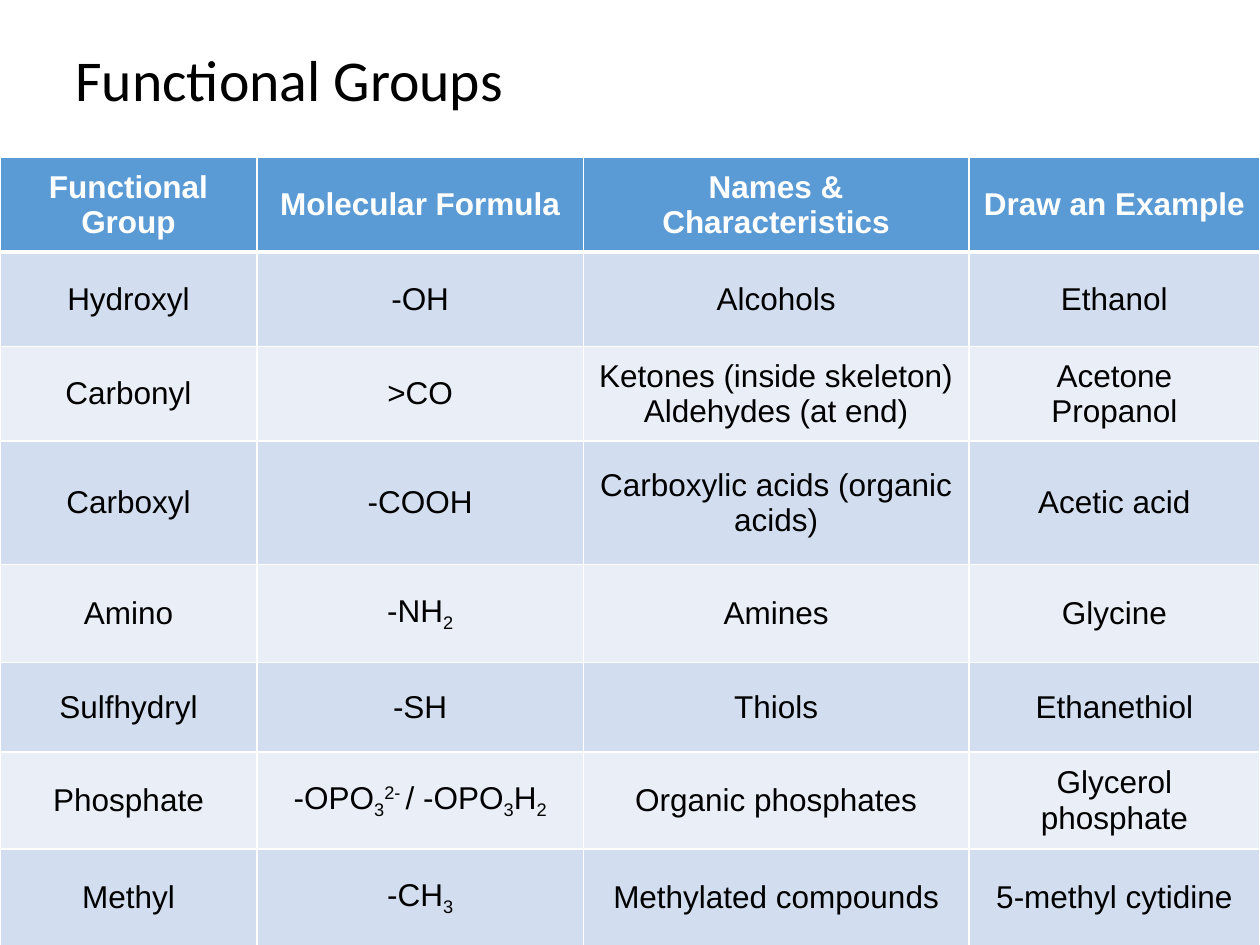
import pptx
import pptx.dml.color
import pptx.enum.text
import pptx.oxml
import pptx.oxml.ns
import pptx.util
from pptx.util import Inches

BLACK = pptx.dml.color.RGBColor(0x00, 0x00, 0x00)
WHITE = pptx.dml.color.RGBColor(0xFF, 0xFF, 0xFF)
HEADER_BLUE = pptx.dml.color.RGBColor(0x5B, 0x9B, 0xD5)
BAND_COLORS = [
    pptx.dml.color.RGBColor(0xD2, 0xDE, 0xEF),
    pptx.dml.color.RGBColor(0xEA, 0xEF, 0xF7),
]

TITLE_FONT = {"name": "Calibri", "size": pptx.util.Pt(33)}
HEADER_FONT = {"name": "Arial", "size": pptx.util.Pt(18), "bold": True}
BODY_FONT = {"name": "Arial", "size": pptx.util.Pt(18), "bold": False}

SUB, SUPER = -25000, 30000
COLUMN_WIDTHS = [2.04, 2.59, 3.06, 2.31]
ROW_HEIGHTS = [0.75, 0.75, 0.75, 0.98, 0.78, 0.71, 0.77, 0.77]

PHOSPHATE_FORMULA = [
    ("-OPO", 0), ("3", SUB), ("2- ", SUPER), ("/ -OPO", 0),
    ("3", SUB), ("H", 0), ("2", SUB),
]
HEADINGS = [
    "Functional Group", "Molecular Formula", "Names & Characteristics", "Draw an Example",
]
GROUPS = [
    ["Hydroxyl", "-OH", "Alcohols", "Ethanol"],
    ["Carbonyl", ">CO", "Ketones (inside skeleton)\nAldehydes (at end)", "Acetone\nPropanol"],
    ["Carboxyl", "-COOH", "Carboxylic acids (organic acids)", "Acetic acid"],
    ["Amino", [("-NH", 0), ("2", SUB)], "Amines", "Glycine"],
    ["Sulfhydryl", "-SH", "Thiols", "Ethanethiol"],
    ["Phosphate", PHOSPHATE_FORMULA, "Organic phosphates", "Glycerol phosphate"],
    ["Methyl", [("-CH", 0), ("3", SUB)], "Methylated compounds", "5-methyl cytidine"],
]


def add_run(paragraph, text, font_values, color, baseline=0):
    run = paragraph.add_run()
    run.text = text
    for attribute, value in font_values.items():
        setattr(run.font, attribute, value)
    run.font.color.rgb = color
    if baseline:
        run._r.get_or_add_rPr().set("baseline", str(baseline))


def add_title(slide, text):
    title = slide.shapes.add_textbox(Inches(0.5), Inches(0.22), Inches(9), Inches(0.87))
    frame = title.text_frame
    frame.word_wrap = True
    frame.vertical_anchor = pptx.enum.text.MSO_ANCHOR.MIDDLE
    frame.paragraphs[0].line_spacing = 0.9
    add_run(frame.paragraphs[0], text, TITLE_FONT, BLACK)


def set_borders(cell, widths):
    properties = cell._tc.get_or_add_tcPr()
    for side, points in widths.items():
        properties.append(pptx.oxml.parse_xml(
            f'<a:ln{side} {pptx.oxml.ns.nsdecls("a")} w="{pptx.util.Pt(points)}">'
            f'<a:solidFill><a:srgbClr val="{WHITE}"/></a:solidFill></a:ln{side}>'
        ))


def fill_cell(cell, content, font_values, color, background, borders):
    set_borders(cell, borders)
    cell.fill.solid()
    cell.fill.fore_color.rgb = background
    cell.vertical_anchor = pptx.enum.text.MSO_ANCHOR.MIDDLE
    if isinstance(content, str):
        lines = [[(line, 0)] for line in content.split("\n")]
    else:
        lines = [content]
    frame = cell.text_frame
    for index, pieces in enumerate(lines):
        paragraph = frame.add_paragraph() if index else frame.paragraphs[0]
        paragraph.alignment = pptx.enum.text.PP_ALIGN.CENTER
        for text, baseline in pieces:
            add_run(paragraph, text, font_values, color, baseline)


def add_group_table(slide):
    rows = [HEADINGS] + GROUPS
    table = slide.shapes.add_table(
        len(rows), len(HEADINGS), 0, Inches(1.25), Inches(10), Inches(6.25)
    ).table
    for column, width in zip(table.columns, COLUMN_WIDTHS):
        column.width = Inches(width)
    for row, height in zip(table.rows, ROW_HEIGHTS):
        row.height = Inches(height)
    for row_index, contents in enumerate(rows):
        if row_index == 0:
            style = (HEADER_FONT, WHITE, HEADER_BLUE)
        else:
            style = (BODY_FONT, BLACK, BAND_COLORS[(row_index - 1) % 2])
        borders = {
            "L": 1,
            "R": 1,
            "T": 3 if row_index == 1 else 1,
            "B": 3 if row_index == 0 else 1,
        }
        for column_index, content in enumerate(contents):
            fill_cell(table.cell(row_index, column_index), content, *style, borders)


def main():
    presentation = pptx.Presentation()
    presentation.slide_width = Inches(10)
    presentation.slide_height = Inches(7.5)
    slide = presentation.slides.add_slide(presentation.slide_layouts[6])
    add_title(slide, "Functional Groups")
    add_group_table(slide)
    presentation.save("out.pptx")


if __name__ == "__main__":
    main()
